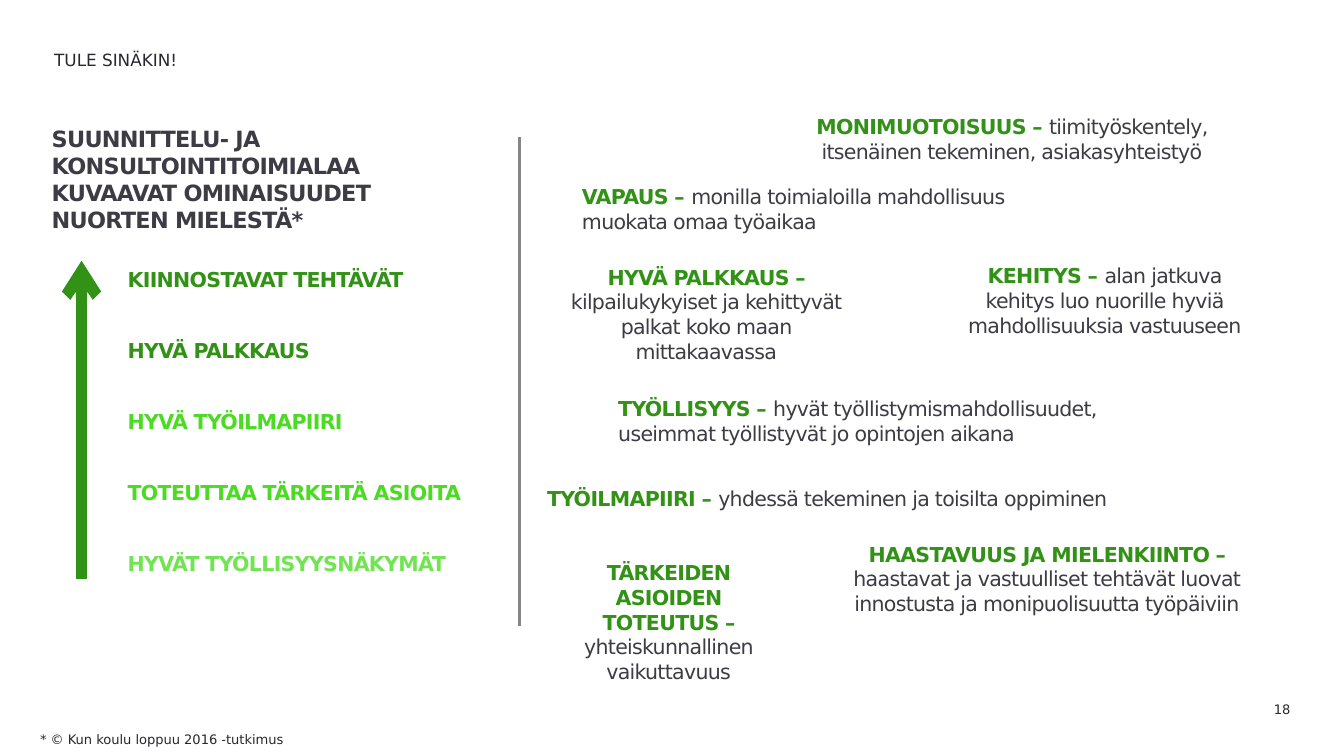
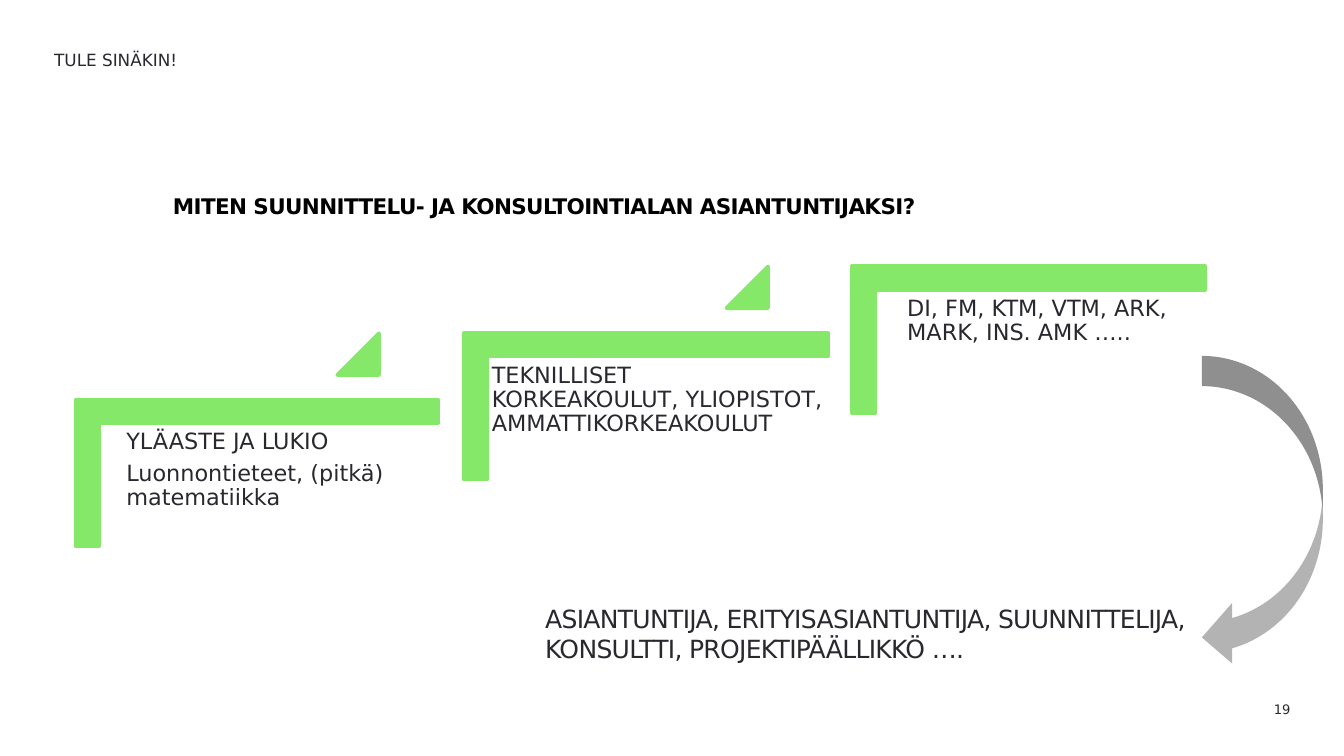
"""Build two slides about the planning and consulting field."""
import pptx
import pptx.dml.color
import pptx.enum.shapes
import pptx.enum.text
import pptx.oxml
import pptx.oxml.ns
import pptx.util

ALIGN = pptx.enum.text.PP_ALIGN
SHAPE = pptx.enum.shapes.MSO_SHAPE
AUTO_SIZE = pptx.enum.text.MSO_AUTO_SIZE
FONT = "DejaVu Sans"
COLUMNS, ROWS = 100, 56.25
CELL = 0.1
INSET = (0.04, 0.04)
WIDE_INSET = (0.1, 0.05)
STEP_INSET = (0.05, 0.05)
COLORS = {
    "ink": "29282E", "body": "3D3C45", "black": "000000", "deep": "329216",
    "bright": "4BDB22", "light": "71E452", "step": "85E869",
    "divider": "868686", "turn": "B3B3B3",
}

RANKING = [
    ("KIINNOSTAVAT TEHTÄVÄT", "deep"),
    ("HYVÄ PALKKAUS", "deep"),
    ("HYVÄ TYÖILMAPIIRI", "bright"),
    ("TOTEUTTAA TÄRKEITÄ ASIOITA", "bright"),
    ("HYVÄT TYÖLLISYYSNÄKYMÄT", "light"),
]
QUALITIES = [
    ((57.8, 8.1, 35, 4.5), ALIGN.CENTER, "MONIMUOTOISUUS – ",
     "tiimityöskentely, itsenäinen tekeminen, asiakasyhteistyö"),
    ((42.9, 13.3, 35, 4.5), ALIGN.LEFT, "VAPAUS – ",
     "monilla toimialoilla mahdollisuus muokata omaa työaikaa"),
    ((42, 19.3, 21.1, 8.2), ALIGN.CENTER, "HYVÄ PALKKAUS – ",
     "kilpailukykyiset ja kehittyvät palkat koko maan mittakaavassa"),
    ((71.6, 19.2, 21.2, 6.3), ALIGN.CENTER, "KEHITYS – ",
     "alan jatkuva kehitys luo nuorille hyviä mahdollisuuksia vastuuseen"),
    ((45.6, 29.1, 40.2, 4.5), ALIGN.LEFT, "TYÖLLISYYS – ",
     "hyvät työllistymismahdollisuudet, useimmat työllistyvät jo opintojen aikana"),
    ((40.3, 35.8, 48.9, 2.6), ALIGN.LEFT, "TYÖILMAPIIRI – ",
     "yhdessä tekeminen ja toisilta oppiminen"),
    ((60.4, 39.9, 35, 6.3), ALIGN.CENTER, "HAASTAVUUS JA MIELENKIINTO – ",
     "haastavat ja vastuulliset tehtävät luovat innostusta ja monipuolisuutta työpäiviin"),
    ((41, 41.3, 17.5, 10.1), ALIGN.CENTER, "TÄRKEIDEN ASIOIDEN TOTEUTUS – ",
     "yhteiskunnallinen vaikuttavuus"),
]
STEPS = [
    (27, 8.9, 22.3, ["YLÄASTE JA LUKIO", "Luonnontieteet, (pitkä) matematiikka"]),
    (27.1, 36.1, 25.7, ["TEKNILLISET KORKEAKOULUT, YLIOPISTOT, AMMATTIKORKEAKOULUT"]),
    (26.3, 67, 20.9, ["DI, FM, KTM, VTM, ARK, MARK, INS. AMK ….."]),
]
STEP_PITCH, STEP_RISE = 28.95, 4.97


def cells(*values):
    """Turn grid cells into lengths."""
    return [pptx.util.Inches(value * CELL) for value in values]


def rgb(name):
    """Look up a palette colour."""
    return pptx.dml.color.RGBColor.from_string(COLORS[name])


def style_run(run, size, color, bold=False, tracking=0):
    """Format one run."""
    run.font.name = FONT
    run.font.size = pptx.util.Pt(size)
    run.font.bold = bold
    run.font.color.rgb = rgb(color)
    if tracking:
        run.font._element.set("spc", str(round(tracking * 100)))


def prepare_frame(frame, inset):
    """Set wrapping, anchor and margins of a text frame."""
    frame.word_wrap = True
    frame.auto_size = AUTO_SIZE.NONE
    frame.vertical_anchor = pptx.enum.text.MSO_ANCHOR.TOP
    frame.margin_left = frame.margin_right = pptx.util.Inches(inset[0])
    frame.margin_top = frame.margin_bottom = pptx.util.Inches(inset[1])


def add_text(slide, box, lines, size, color, inset=INSET, align=ALIGN.LEFT,
             bold=False, tracking=0):
    """Add a text box with one paragraph per line and return its frame."""
    frame = slide.shapes.add_textbox(*cells(*box)).text_frame
    prepare_frame(frame, inset)
    frame.text = "\n".join(lines)
    for paragraph in frame.paragraphs:
        paragraph.alignment = align
        for run in paragraph.runs:
            style_run(run, size, color, bold, tracking)
    return frame


def set_title(slide, box, text, size, color, inset, tracking):
    """Place and format the title placeholder and return its paragraph."""
    title = slide.shapes.title
    title.left, title.top, title.width, title.height = cells(*box)
    prepare_frame(title.text_frame, inset)
    title.text_frame.text = text
    heading = title.text_frame.paragraphs[0]
    heading.alignment = ALIGN.LEFT
    style_run(heading.runs[0], size, color, True, tracking)
    return heading


def add_quality(slide, box, align, term, description):
    """Add a bold term followed by its description."""
    frame = add_text(slide, box, [term], 11, "deep", align=align, bold=True, tracking=-0.4)
    run = frame.paragraphs[0].add_run()
    run.text = description
    style_run(run, 11, "body", tracking=-0.4)


def add_line(slide, start, end, color, width, arrow=False):
    """Add a straight line, with an arrowhead at its end if asked."""
    line = slide.shapes.add_connector(
        pptx.enum.shapes.MSO_CONNECTOR.STRAIGHT, *cells(*start, *end))
    line.line.color.rgb = rgb(color)
    line.line.width = pptx.util.Pt(width)
    properties = line._element.spPr
    if arrow:
        outline = properties.find(pptx.oxml.ns.qn("a:ln"))
        outline.append(pptx.oxml.parse_xml(
            f'<a:tailEnd {pptx.oxml.ns.nsdecls("a")} type="arrow"/>'))
    properties.append(pptx.oxml.parse_xml(f'<a:effectLst {pptx.oxml.ns.nsdecls("a")}/>'))


def add_solid(slide, kind, box, color, adjustments=(), outline=0, rotation=0):
    """Add a filled preset shape."""
    solid = slide.shapes.add_shape(kind, *cells(*box))
    solid.shadow.inherit = False
    solid.rotation = rotation
    solid.fill.solid()
    solid.fill.fore_color.rgb = rgb(color)
    for index, value in enumerate(adjustments):
        solid.adjustments[index] = value
    if outline:
        solid.line.color.rgb = rgb(color)
        solid.line.width = pptx.util.Pt(outline)
    else:
        solid.line.fill.background()


def add_step(slide, index, width, text_left, text_width, lines):
    """Add one stair step: its corner, its text and the triangle after it."""
    rise = STEP_RISE * index
    depth = 10.9
    center = 5.62 + 28.88 * index + width / 2
    corner = (center - depth / 2, 35.2 - rise - width / 2, depth, width)
    add_solid(slide, SHAPE.CORNER, corner, "step", (0.161, 0.161), 2, 90)
    frame = add_text(slide, (text_left, 31.54 - rise, text_width, 14.4), lines,
                     12, "ink", STEP_INSET)
    for paragraph in frame.paragraphs:
        paragraph.line_spacing = 0.9
        paragraph.space_after = pptx.util.Pt(4.2)
    if index < len(STEPS) - 1:
        triangle = (25.1 + STEP_PITCH * index, 24.8 - rise, 3.1, 3.1)
        add_solid(slide, SHAPE.ISOSCELES_TRIANGLE, triangle, "step", (1,), 2)


def add_page(deck, number):
    """Add a slide with the running header and page number."""
    slide = deck.slides.add_slide(deck.slide_layouts[5])
    add_text(slide, (3.05, 3.2, 46.9, 2.7), ["TULE SINÄKIN!"], 9, "ink", WIDE_INSET)
    add_text(slide, (87.6, 51.7, 9.4, 1.8), [str(number)], 7, "ink",
             WIDE_INSET, ALIGN.RIGHT)
    return slide


def build_qualities(deck):
    """Build the slide on what young people think of the field."""
    slide = add_page(deck, 18)
    heading = set_title(slide, (3.45, 8.9, 29.9, 8.9),
                        "SUUNNITTELU- JA KONSULTOINTITOIMIALAA KUVAAVAT "
                        "OMINAISUUDET NUORTEN MIELESTÄ*", 12, "body", INSET, -0.4)
    heading.line_spacing = 1.0
    for index, (label, color) in enumerate(RANKING):
        add_text(slide, (9.1, 19.5 + 5.27 * index, 31.6, 2.6), [label], 11, color,
                 bold=True, tracking=-0.4)
    add_line(slide, (6.07, 43.1), (6.07, 19.4), "deep", 6, arrow=True)
    add_line(slide, (38.66, 10.2), (38.66, 46.6), "divider", 2)
    for quality in QUALITIES:
        add_quality(slide, *quality)
    add_text(slide, (2, 53.94, 23.1, 1.8), ["* © Kun koulu loppuu 2016 -tutkimus"],
             7, "ink", WIDE_INSET)


def build_path(deck):
    """Build the slide on the way to becoming an expert."""
    slide = add_page(deck, 19)
    heading = set_title(slide, (11.87, 12.05, 78.2, 4),
                        "MITEN SUUNNITTELU- JA KONSULTOINTIALAN ASIANTUNTIJAKSI?",
                        11.5, "black", WIDE_INSET, -0.34)
    heading.line_spacing = pptx.util.Pt(27)
    for index, step in enumerate(STEPS):
        add_step(slide, index, *step)
    add_solid(slide, SHAPE.CURVED_LEFT_ARROW, (89.43, 26.48, 9, 23.2), "turn")
    add_text(slide, (40.16, 44.5, 49.1, 5.3),
             ["ASIANTUNTIJA, ERITYISASIANTUNTIJA, SUUNNITTELIJA, "
              "KONSULTTI, PROJEKTIPÄÄLLIKKÖ …."], 13.4, "ink", tracking=-0.4)


def main():
    """Build and save the deck."""
    deck = pptx.Presentation()
    deck.slide_width, deck.slide_height = cells(COLUMNS, ROWS)
    build_qualities(deck)
    build_path(deck)
    deck.save("out.pptx")


if __name__ == "__main__":
    main()
